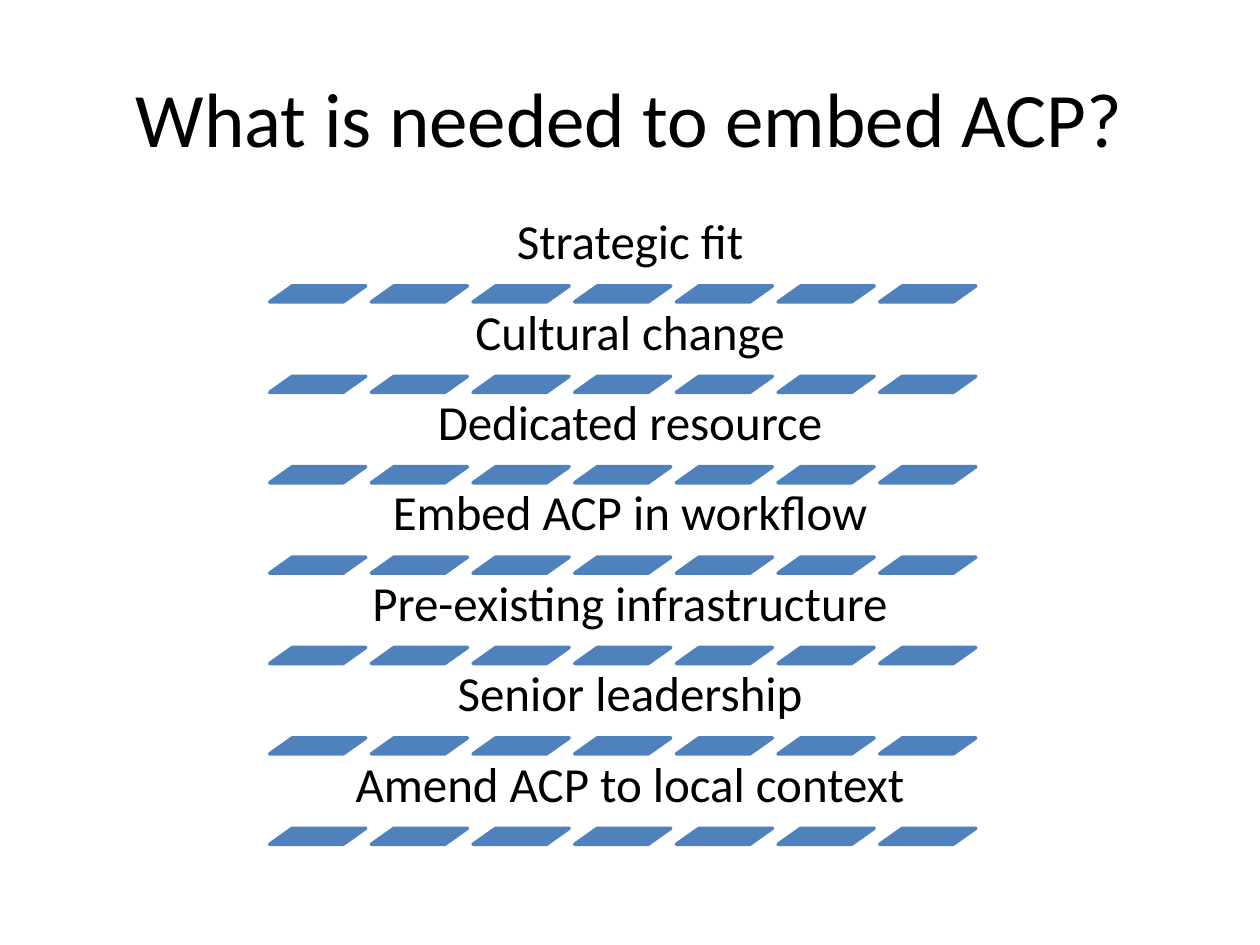
from dataclasses import dataclass

from pptx import Presentation
from pptx.dml.color import RGBColor
from pptx.enum import shapes, text
from pptx.util import Pt


@dataclass(frozen=True)
class Theme:
    font: str = "Calibri"
    ink: RGBColor = RGBColor(0x00, 0x00, 0x00)
    accent: RGBColor = RGBColor(0x4F, 0x81, 0xBD)
    title_size: int = 44
    item_size: int = 28
    line_width: int = 2


FACTORS = [
    "Strategic fit",
    "Cultural change",
    "Dedicated resource",
    "Embed ACP in workflow",
    "Pre-existing infrastructure",
    "Senior leadership",
    "Amend ACP to local context",
]
LIST_LEFT, LIST_TOP, LIST_WIDTH = 154.1, 126, 411.8
LABEL_HEIGHT, ROW_PITCH = 37.4, 51.65
DASH_COUNT, DASH_PITCH = 7, 58.1
DASH_WIDTH, DASH_HEIGHT, DASH_SLANT = 54.9, 9.15, 1.41
LABEL_INSET = 8.9


class SlideBuilder:
    def __init__(self, slide, theme):
        self.slide = slide
        self.theme = theme

    def style_paragraph(self, paragraph, size):
        paragraph.alignment = text.PP_ALIGN.CENTER
        paragraph.font.name = self.theme.font
        paragraph.font.size = Pt(size)
        paragraph.font.color.rgb = self.theme.ink

    def title(self, wording, left, top, width, height):
        title = self.slide.shapes.title
        title.left, title.top = Pt(left), Pt(top)
        title.width, title.height = Pt(width), Pt(height)
        frame = title.text_frame
        frame.text = wording
        frame.vertical_anchor = text.MSO_ANCHOR.MIDDLE
        self.style_paragraph(frame.paragraphs[0], self.theme.title_size)

    def group(self):
        return self.slide.shapes.add_group_shape()

    def label(self, group, wording, left, top, width, height):
        box = group.shapes.add_textbox(Pt(left), Pt(top), Pt(width), Pt(height))
        frame = box.text_frame
        frame.word_wrap = True
        frame.vertical_anchor = text.MSO_ANCHOR.BOTTOM
        frame.margin_left = frame.margin_right = Pt(LABEL_INSET)
        frame.margin_top = frame.margin_bottom = Pt(LABEL_INSET)
        frame.text = wording
        paragraph = frame.paragraphs[0]
        paragraph.line_spacing = 0.9
        self.style_paragraph(paragraph, self.theme.item_size)

    def dash_row(self, group, left, top):
        """Draw one underline made of evenly spaced slanted dashes."""
        for column in range(DASH_COUNT):
            dash = group.shapes.add_shape(
                shapes.MSO_SHAPE.PARALLELOGRAM,
                Pt(left + column * DASH_PITCH), Pt(top),
                Pt(DASH_WIDTH), Pt(DASH_HEIGHT),
            )
            dash.adjustments[0] = DASH_SLANT
            dash.shadow.inherit = False
            dash.fill.solid()
            dash.fill.fore_color.rgb = self.theme.accent
            dash.line.color.rgb = self.theme.accent
            dash.line.width = Pt(self.theme.line_width)


def main():
    presentation = Presentation()
    presentation.slide_width, presentation.slide_height = Pt(720), Pt(540)
    title_only = presentation.slide_layouts[5]
    builder = SlideBuilder(presentation.slides.add_slide(title_only), Theme())

    builder.title("What is needed to embed ACP?", 36, 21.6, 648, 90)
    factor_list = builder.group()
    for row, factor in enumerate(FACTORS):
        top = LIST_TOP + row * ROW_PITCH
        builder.label(factor_list, factor, LIST_LEFT, top, LIST_WIDTH, LABEL_HEIGHT)
        builder.dash_row(factor_list, LIST_LEFT, top + LABEL_HEIGHT)

    presentation.save("out.pptx")


if __name__ == "__main__":
    main()
